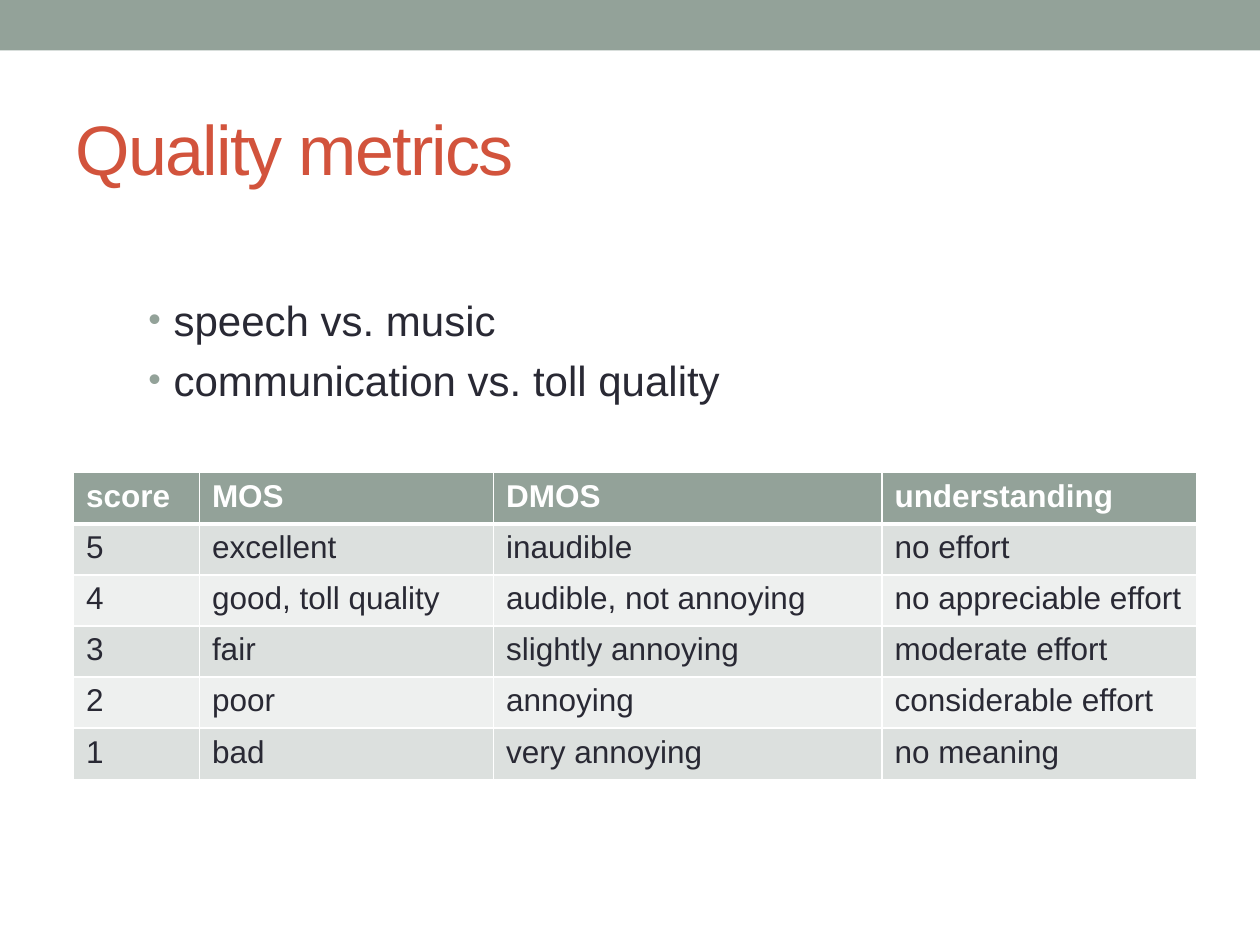
from dataclasses import dataclass

from lxml import etree
from pptx import Presentation
from pptx.dml.color import RGBColor
from pptx.enum.shapes import MSO_SHAPE
from pptx.enum.text import MSO_ANCHOR, MSO_AUTO_SIZE, PP_ALIGN
from pptx.oxml.ns import qn
from pptx.util import Cm, Pt

RECT = MSO_SHAPE.RECTANGLE
MIDDLE, TOP = MSO_ANCHOR.MIDDLE, MSO_ANCHOR.TOP
LEFT = PP_ALIGN.LEFT
NO_FIT = MSO_AUTO_SIZE.NONE


@dataclass(frozen=True)
class Theme:
    """Colours, font and type sizes of the slide."""
    font: str = "Arial"
    accent: str = "93A299"
    title: str = "D2533C"
    ink: str = "292934"
    white: str = "FFFFFF"
    bands: tuple = ("DCE0DE", "EEF0EF")
    title_size: int = 40
    body_size: int = 24
    table_size: int = 18


T = Theme()
BULLETS = ["speech vs. music", "communication vs. toll quality"]
COLUMNS = [2.54, 5.93, 7.83, 6.35]
ROW_HEIGHT = 1.03
SCORES = [
    ("score", "MOS", "DMOS", "understanding"),
    ("5", "excellent", "inaudible", "no effort"),
    ("4", "good, toll quality", "audible, not annoying", "no appreciable effort"),
    ("3", "fair", "slightly annoying", "moderate effort"),
    ("2", "poor", "annoying", "considerable effort"),
    ("1", "bad", "very annoying", "no meaning"),
]


def write(p, text, size, color=T.ink, bold=False):
    """Add one formatted run to a paragraph and return it."""
    p.alignment = LEFT
    r = p.add_run()
    r.text = text
    r.font.name, r.font.size, r.font.bold = T.font, Pt(size), bold
    r.font.color.rgb = RGBColor.from_string(color)
    return r


def set_frame(tf, anchor, margin_top):
    """Set wrapping, anchor and top inset of a text frame."""
    tf.word_wrap = True
    tf.auto_size = NO_FIT
    tf.vertical_anchor = anchor
    tf.margin_top = Cm(margin_top)


def add_band(s):
    """Draw the coloured band along the top edge."""
    sp = s.shapes.add_shape(RECT, 0, 0, Cm(25.4), Cm(1.02))
    sp.shadow.inherit = False
    sp.fill.solid()
    sp.fill.fore_color.rgb = RGBColor.from_string(T.accent)
    sp.line.fill.background()


def set_title(s, text):
    """Place and format the title placeholder."""
    sp = s.shapes.title
    sp.left, sp.top, sp.width, sp.height = Cm(1.27), Cm(1.47), Cm(22.86), Cm(2.74)
    set_frame(sp.text_frame, MIDDLE, 0.38)
    r = write(sp.text_frame.paragraphs[0], text, T.title_size, T.title)
    r.font._element.set("spc", "-100")


def add_bullet(p):
    """Give a paragraph a hanging coloured bullet."""
    pPr = p._p.get_or_add_pPr()
    pPr.set("marL", str(Cm(0.51)))
    pPr.set("indent", str(Cm(-0.51)))
    color = etree.SubElement(pPr, qn("a:buClr"))
    etree.SubElement(color, qn("a:srgbClr"), val=T.accent)
    etree.SubElement(pPr, qn("a:buSzPct"), val="85000")
    etree.SubElement(pPr, qn("a:buFont"), typeface=T.font)
    etree.SubElement(pPr, qn("a:buChar"), char="•")


def add_bullets(s, items):
    """Add the bulleted list."""
    tf = s.shapes.add_textbox(Cm(2.74), Cm(5.69), Cm(19.91), Cm(3.63)).text_frame
    set_frame(tf, TOP, 0.24)
    for i, text in enumerate(items):
        p = tf.add_paragraph() if i else tf.paragraphs[0]
        add_bullet(p)
        if i:
            p.space_before = Pt(5.5)
        write(p, text, T.body_size)


def set_borders(cell, **widths):
    """Draw white cell borders, with widths in points by side."""
    tcPr = cell._tc.get_or_add_tcPr()
    for i, (side, width) in enumerate(widths.items()):
        ln = etree.Element(qn(f"a:ln{side}"), w=str(Pt(width)))
        fill = etree.SubElement(ln, qn("a:solidFill"))
        etree.SubElement(fill, qn("a:srgbClr"), val=T.white)
        tcPr.insert(i, ln)


def add_scores(s, rows):
    """Add the score table with a header and banded rows."""
    frame = s.shapes.add_table(len(rows), len(COLUMNS), Cm(1.48), Cm(9.53),
                               Cm(sum(COLUMNS)), Cm(ROW_HEIGHT * len(rows)))
    table = frame.table
    for column, width in zip(table.columns, COLUMNS):
        column.width = Cm(width)
    for i, values in enumerate(rows):
        table.rows[i].height = Cm(ROW_HEIGHT)
        header = i == 0
        fill = T.accent if header else T.bands[(i - 1) % 2]
        for j, text in enumerate(values):
            cell = table.cell(i, j)
            cell.fill.solid()
            cell.fill.fore_color.rgb = RGBColor.from_string(fill)
            set_borders(cell, L=1, R=1, T=3 if i == 1 else 1, B=3 if header else 1)
            write(cell.text_frame.paragraphs[0], text, T.table_size,
                  T.white if header else T.ink, header)


def main():
    """Build and save the slide."""
    prs = Presentation()
    prs.slide_width, prs.slide_height = Cm(25.4), Cm(19.05)
    s = prs.slides.add_slide(prs.slide_layouts[5])
    add_band(s)
    set_title(s, "Quality metrics")
    add_bullets(s, BULLETS)
    add_scores(s, SCORES)
    prs.save("out.pptx")


if __name__ == "__main__":
    main()
